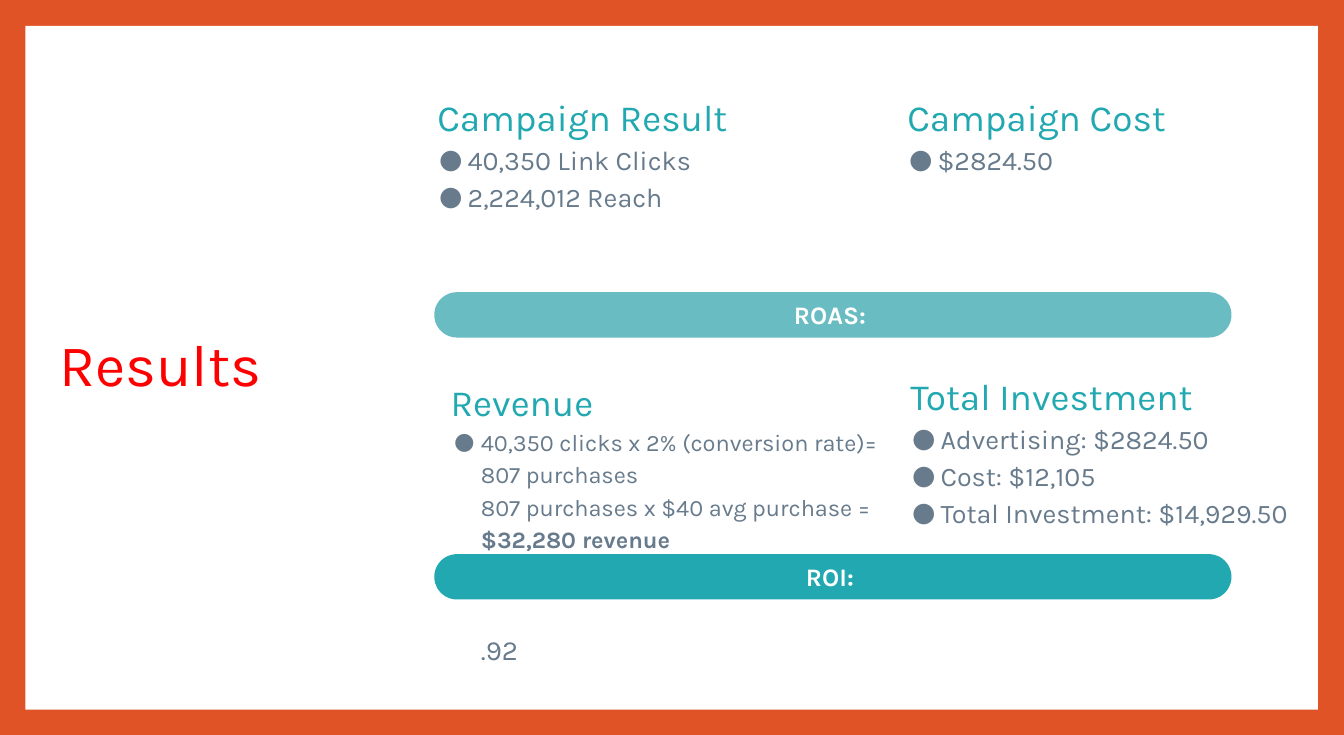
from dataclasses import dataclass

from lxml import etree
from pptx import Presentation
from pptx.dml.color import RGBColor
from pptx.enum import shapes, text
from pptx.oxml import ns
from pptx.util import Inches, Pt


@dataclass(frozen=True)
class Theme:
    font: str = "Karla"
    frame: str = "DF5327"
    panel: str = "FFFFFF"
    title: str = "FF0000"
    accent: str = "21A8B0"
    accent_light: str = "69BCC1"
    body: str = "677B8C"
    title_size: float = 70
    heading_size: float = 44
    body_size: float = 32
    small_size: float = 28
    result_size: float = 33
    label_size: float = 30


THEME = Theme()
COMPARISON_LAYOUT = 4


@dataclass(frozen=True)
class Span:
    words: str
    bold: bool = False


@dataclass(frozen=True)
class Line:
    spans: tuple[Span, ...]
    size: float = THEME.body_size
    bullet: bool = True
    hanging: float = 0.47
    before: float = 0


@dataclass(frozen=True)
class Section:
    heading: str
    left: float
    top: float
    width: float
    height: float
    lines: tuple[Line, ...]


@dataclass(frozen=True)
class Bar:
    label: str
    top: float
    color: str


def item(words: str) -> Line:
    return Line((Span(words),))


SECTIONS = (
    Section("Campaign Result", 7.01, 0.97, 7.55, 3.7,
            (item("40,350 Link Clicks"), item("2,224,012 Reach"))),
    Section("Campaign Cost", 14.78, 0.97, 6.7, 2.79, (item("$2824.50"),)),
    Section("Revenue", 7.23, 5.68, 7.55, 3.7, (
        Line((Span("40,350 clicks x 2% (conversion rate)= 807 purchases"),),
             THEME.small_size, hanging=0.44),
        Line((Span("807 purchases x $40 avg purchase = "),
              Span("$32,280 revenue", bold=True)), THEME.small_size, bullet=False),
        Line((Span(".92"),), THEME.result_size, bullet=False, before=89),
    )),
    Section("Total Investment", 14.83, 5.58, 7.55, 3.7,
            (item("Advertising: $2824.50"), item("Cost: $12,105"),
             item("Total Investment: $14,929.50"))),
)
BARS = (Bar("ROAS:", 4.83, THEME.accent_light), Bar("ROI:", 9.16, THEME.accent))


def place(box, left: float, top: float, width: float, height: float) -> None:
    box.left, box.top = Inches(left), Inches(top)
    box.width, box.height = Inches(width), Inches(height)


def prepare_frame(box, anchor, inset: float = 0.22):
    frame = box.text_frame
    frame.word_wrap = True
    frame.auto_size = text.MSO_AUTO_SIZE.NONE
    frame.vertical_anchor = anchor
    frame.margin_left = frame.margin_right = Inches(inset)
    frame.margin_top = frame.margin_bottom = Inches(inset)
    return frame


def add_span(para, words: str, size: float, color: str, bold: bool = False) -> None:
    span = para.add_run()
    span.text = words
    span.font.name = THEME.font
    span.font.size = Pt(size)
    span.font.bold = bold
    span.font.color.rgb = RGBColor.from_string(color)


def set_spacing(para, line: float, before: float = 0) -> None:
    para.line_spacing = line
    para.space_before = Pt(before)
    para.space_after = Pt(0)


def set_bullet(para, margin: float = 0, hanging: float = 0, bullet: bool = False) -> None:
    """Set the indents, and show a round bullet or none."""
    props = para._p.get_or_add_pPr()
    props.set("marL", str(Inches(margin)))
    props.set("indent", str(-Inches(hanging) if bullet else 0))
    if not bullet:
        etree.SubElement(props, ns.qn("a:buNone"))
        return
    color = etree.SubElement(props, ns.qn("a:buClr"))
    etree.SubElement(color, ns.qn("a:srgbClr"), val=THEME.body)
    etree.SubElement(props, ns.qn("a:buFont"), typeface=THEME.font)
    etree.SubElement(props, ns.qn("a:buChar"), char="●")


def add_block(page, kind, color: str, left: float, top: float, width: float, height: float):
    block = page.shapes.add_shape(
        kind, Inches(left), Inches(top), Inches(width), Inches(height))
    block.shadow.inherit = False
    block.fill.solid()
    block.fill.fore_color.rgb = RGBColor.from_string(color)
    block.line.fill.background()
    return block


def draw_background(page) -> None:
    page.background.fill.solid()
    page.background.fill.fore_color.rgb = RGBColor.from_string(THEME.frame)
    panel = add_block(page, shapes.MSO_SHAPE.RECTANGLE, THEME.panel,
                      0.42, 0.43, 21.37, 11.3)
    page.shapes._spTree.insert(2, panel._element)  # behind the placeholders


def draw_title(box) -> None:
    place(box, 0.76, 4.09, 4.53, 3.96)
    para = prepare_frame(box, text.MSO_ANCHOR.MIDDLE).paragraphs[0]
    para.alignment = text.PP_ALIGN.LEFT
    set_spacing(para, 0.9)
    add_span(para, "Results", THEME.title_size, THEME.title)


def draw_section(box, section: Section) -> None:
    place(box, section.left, section.top, section.width, section.height)
    frame = prepare_frame(box, text.MSO_ANCHOR.TOP)
    heading = frame.paragraphs[0]
    set_spacing(heading, 1.5)
    set_bullet(heading)
    add_span(heading, section.heading, THEME.heading_size, THEME.accent)
    for line in section.lines:
        para = frame.add_paragraph()
        set_spacing(para, 1.15, line.before)
        set_bullet(para, 0.5, line.hanging, line.bullet)
        for span in line.spans:
            add_span(para, span.words, line.size, THEME.body, span.bold)


def draw_bar(page, bar: Bar) -> None:
    block = add_block(page, shapes.MSO_SHAPE.ROUNDED_RECTANGLE, bar.color,
                      7.18, bar.top, 13.18, 0.75)
    block.adjustments[0] = 0.5
    frame = prepare_frame(block, text.MSO_ANCHOR.MIDDLE, inset=0)
    frame.margin_right = Inches(0.1)
    para = frame.paragraphs[0]
    para.alignment = text.PP_ALIGN.CENTER
    add_span(para, bar.label, THEME.label_size, THEME.panel, bold=True)


def main() -> None:
    deck = Presentation()
    deck.slide_width, deck.slide_height = Inches(22.22), Inches(12.15)
    page = deck.slides.add_slide(deck.slide_layouts[COMPARISON_LAYOUT])
    title, *bodies = page.placeholders
    draw_background(page)
    draw_title(title)
    for box, section in zip(bodies, SECTIONS):
        draw_section(box, section)
    for bar in BARS:
        draw_bar(page, bar)
    deck.save("out.pptx")


if __name__ == "__main__":
    main()
